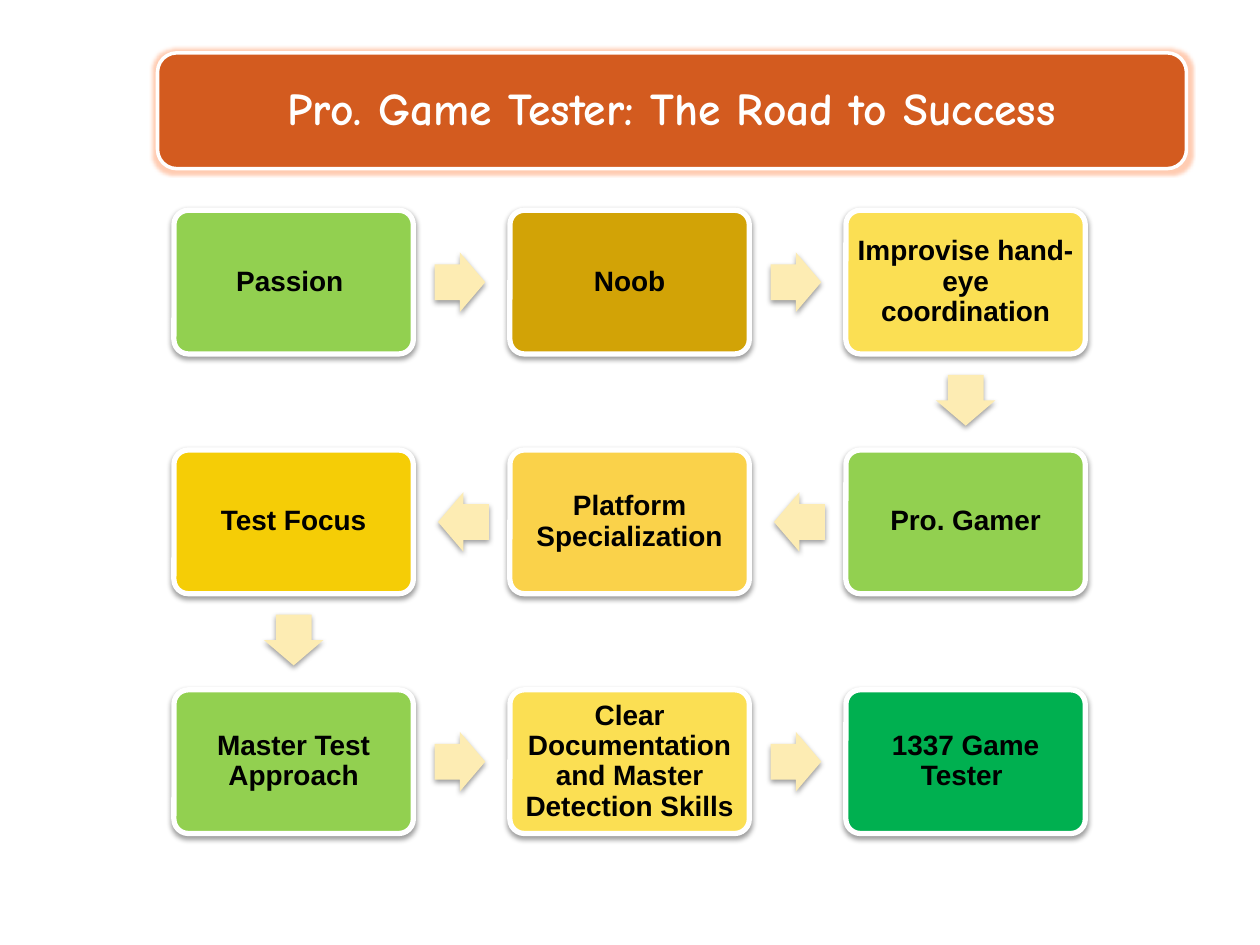
from dataclasses import dataclass
from itertools import pairwise

from pptx import Presentation
from pptx.dml.color import RGBColor
from pptx.enum.shapes import MSO_SHAPE
from pptx.enum.text import MSO_ANCHOR, PP_ALIGN
from pptx.oxml import parse_xml
from pptx.oxml.ns import nsdecls, qn
from pptx.util import Pt

ROUND = MSO_SHAPE.ROUNDED_RECTANGLE
ARROW = MSO_SHAPE.RIGHT_ARROW
MIDDLE = MSO_ANCHOR.MIDDLE
CENTER = PP_ALIGN.CENTER


@dataclass(frozen=True)
class Theme:
    title: str = "D35B1F"
    halo: str = "FF8040"
    arrow: str = "FDECB3"
    white: str = "FFFFFF"
    black: str = "000000"
    green: str = "92D050"
    lemon: str = "FBDF53"
    head_font: str = "Comic Neue"
    head_size: float = 26
    font: str = "Arial"
    size: float = 16


THEME = Theme()

# Step grid, in points
LEFT, TOP = 99.4, 120.2
WIDE, HIGH = 136.8, 82.1
STEP_X, STEP_Y = 192, 137
COLS = 3

STEPS = [
    ("Passion ", THEME.green),
    ("Noob", "D2A306"),
    ("Improvise hand-eye coordination", THEME.lemon),
    ("Pro. Gamer", THEME.green),
    ("Platform Specialization", "FAD24A"),
    ("Test Focus", "F5CD06"),
    ("Master Test Approach", THEME.green),
    ("Clear Documentation and Master Detection Skills", THEME.lemon),
    ("1337 Game Tester ", "00B050"),
]


def add_effect(shape, tag, attrs, color, alpha):
    """Put one shadow or glow on a shape."""
    shape.shadow.inherit = False
    effects = shape._element.spPr.find(qn("a:effectLst"))
    effects.append(parse_xml(
        f'<a:{tag} {nsdecls("a")} {attrs}><a:srgbClr val="{color}">'
        f'<a:alpha val="{alpha * 1000}"/></a:srgbClr></a:{tag}>'))


def add_shadow(shape):
    attrs = (f'blurRad="{Pt(3.1)}" dist="{Pt(1.6)}" dir="5400000" '
             'rotWithShape="0"')
    add_effect(shape, "outerShdw", attrs, THEME.black, 38)


def add_form(slide, kind, box, fill, line=0):
    """Add a filled shape with an optional white outline."""
    shape = slide.shapes.add_shape(kind, *map(Pt, box))
    shape.fill.solid()
    shape.fill.fore_color.rgb = RGBColor.from_string(fill)
    if line:
        shape.line.color.rgb = RGBColor.from_string(THEME.white)
        shape.line.width = Pt(line)
    else:
        shape.line.fill.background()
    return shape


def set_text(shape, text, font, size, color, inset):
    frame = shape.text_frame
    frame.word_wrap = True
    frame.vertical_anchor = MIDDLE
    frame.margin_left = frame.margin_right = Pt(inset)
    frame.margin_top = frame.margin_bottom = Pt(2.5)
    frame.text = text
    para = frame.paragraphs[0]
    para.alignment = CENTER
    para.line_spacing = 0.9
    style = para.runs[0].font
    style.name, style.size, style.bold = font, Pt(size), True
    style.color.rgb = RGBColor.from_string(color)


def add_title(slide, text):
    shape = add_form(slide, ROUND, (90, 30.2, 588, 66.2), THEME.title, 2)
    add_effect(shape, "glow", f'rad="{Pt(4)}"', THEME.halo, 40)
    set_text(shape, text, THEME.head_font, THEME.head_size, THEME.white, 14)


def add_step(slide, center, text, fill):
    x, y = center
    box = (x - WIDE / 2, y - HIGH / 2, WIDE, HIGH)
    shape = add_form(slide, ROUND, box, fill, 3)
    shape.adjustments[0] = 0.1
    add_shadow(shape)
    set_text(shape, text, THEME.font, THEME.size, THEME.black, 2.5)


def add_arrow(slide, start, end):
    """Add an arrow between two steps, one point short of the middle."""
    wide, high = 29, 34
    dx = (end[0] > start[0]) - (end[0] < start[0])
    dy = int(end[1] > start[1])
    x = (start[0] + end[0]) / 2 - dx
    y = (start[1] + end[1]) / 2 - dy
    box = (x - wide / 2, y - high / 2, wide, high)
    shape = add_form(slide, ARROW, box, THEME.arrow)
    shape.adjustments[0] = 0.6
    shape.adjustments[1] = 0.5
    shape.rotation = 90 if dy else 180 if dx < 0 else 0
    add_shadow(shape)


def find_center(index):
    """Rows run left to right and back in turn."""
    row, col = divmod(index, COLS)
    if row % 2:
        col = COLS - 1 - col
    return LEFT + WIDE / 2 + col * STEP_X, TOP + HIGH / 2 + row * STEP_Y


def main():
    deck = Presentation()
    deck.slide_width, deck.slide_height = Pt(720), Pt(540)
    slide = deck.slides.add_slide(deck.slide_layouts[6])

    # Steps and the arrows between them
    spots = [find_center(i) for i in range(len(STEPS))]
    for spot, (text, fill) in zip(spots, STEPS):
        add_step(slide, spot, text, fill)
    for start, end in pairwise(spots):
        add_arrow(slide, start, end)

    # Title banner
    add_title(slide, "Pro. Game Tester: The Road to Success")
    deck.save("out.pptx")


if __name__ == "__main__":
    main()
